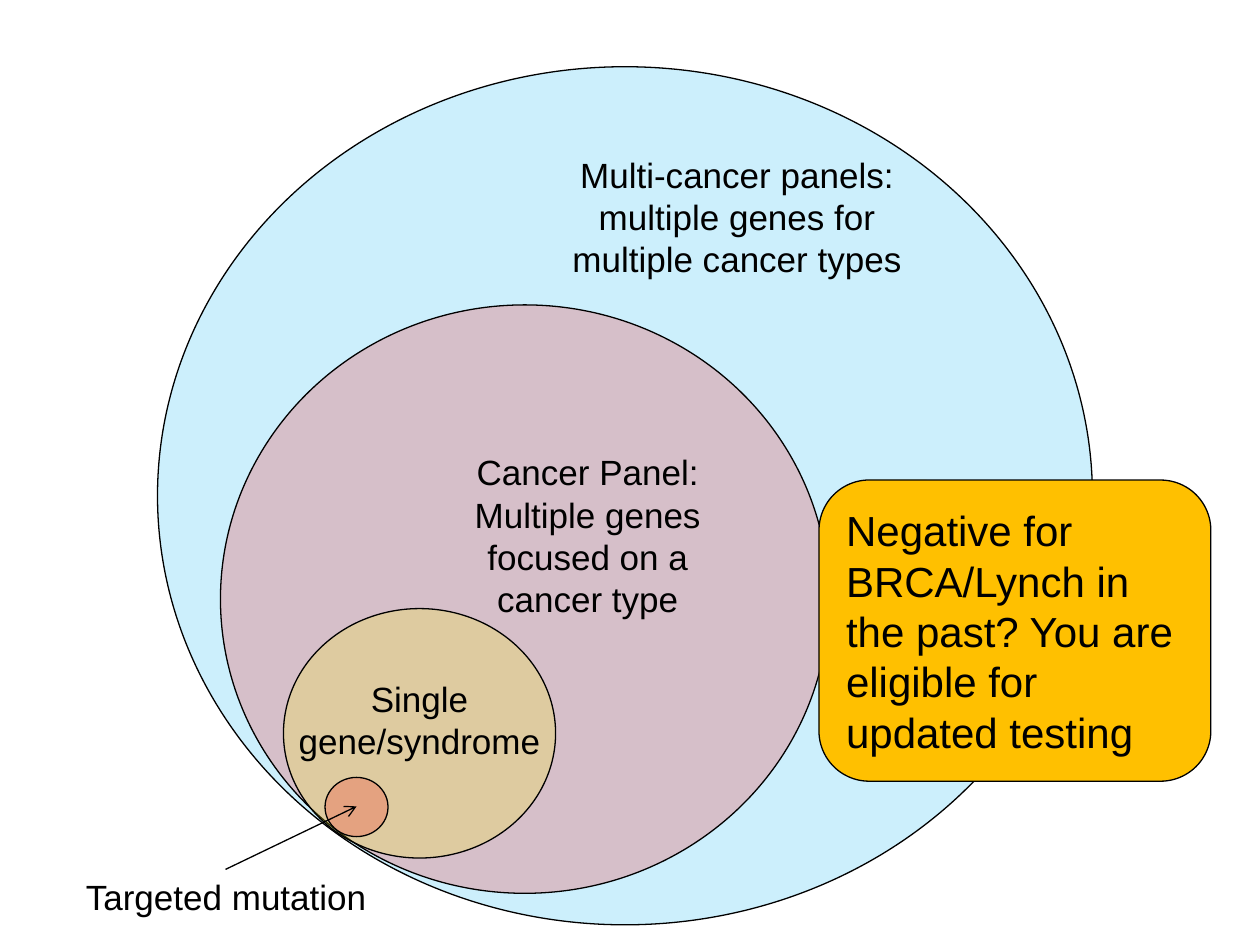
"""Build a slide of nested ellipses comparing the scope of genetic cancer tests."""
from lxml import etree
from pptx import Presentation
from pptx import util as u
from pptx.dml.color import RGBColor
from pptx.enum import shapes, text
from pptx.oxml.ns import qn

PX = u.Inches(1) // 100
THEME = {
    "font": "Arial", "ink": "000000", "line": 0.75, "label": 20, "callout": 24,
    "blue": "00B0F0", "red": "FF0000", "yellow": "FFFF00", "amber": "FFC000",
    "alpha": "20000",
}


def add_panel(slide, kind, box, color, alpha=None):
    """Add an outlined, filled shape."""
    shape = slide.shapes.add_shape(kind, *[value * PX for value in box])
    shape.shadow.inherit = False
    shape.fill.solid()
    shape.fill.fore_color.rgb = RGBColor.from_string(THEME[color])
    if alpha:
        fill_color = shape.fill._xPr.find(qn("a:solidFill"))[0]
        etree.SubElement(fill_color, qn("a:alpha"), val=alpha)
    shape.line.color.rgb = RGBColor.from_string(THEME["ink"])
    shape.line.width = u.Pt(THEME["line"])
    return shape


def write(shape, wording, size, alignment, anchor):
    """Fill a shape with one formatted paragraph."""
    frame = shape.text_frame
    frame.word_wrap = True
    frame.vertical_anchor = anchor
    paragraph = frame.paragraphs[0]
    paragraph.alignment = alignment
    run = paragraph.add_run()
    run.text = wording
    formats = {"name": THEME["font"], "size": u.Pt(THEME[size])}
    for name, value in formats.items():
        setattr(run.font, name, value)
    run.font.color.rgb = RGBColor.from_string(THEME["ink"])


presentation = Presentation()
presentation.slide_width = 1000 * PX
presentation.slide_height = 750 * PX
slide = presentation.slides.add_slide(presentation.slide_layouts[6])

ellipses = [
    ((125, 53, 742, 681), "blue"),
    ((175, 242, 483, 467), "red"),
    ((225, 483, 216, 198), "yellow"),
    ((258, 617, 50, 47), "red"),
]
for box, color in ellipses:
    add_panel(slide, shapes.MSO_SHAPE.OVAL, box, color, THEME["alpha"])

labels = [
    ((333, 353, 267, 145), "Cancer Panel: Multiple genes focused on a cancer type"),
    ((435, 117, 300, 111), "Multi-cancer panels: multiple genes for multiple cancer types"),
    ((225, 533, 216, 77), "Single gene/syndrome"),
    ((42, 690, 275, 44), "Targeted mutation"),
]
for box, wording in labels:
    label = slide.shapes.add_textbox(*[value * PX for value in box])
    write(label, wording, "label", text.PP_ALIGN.CENTER, text.MSO_ANCHOR.TOP)

arrow = slide.shapes.add_connector(
    shapes.MSO_CONNECTOR.STRAIGHT, *[value * PX for value in (179, 690, 283, 640)])
arrow.line.color.rgb = RGBColor.from_string(THEME["ink"])
arrow.line.width = u.Pt(THEME["line"])
etree.SubElement(arrow.line._get_or_add_ln(), qn("a:tailEnd"), type="arrow")
etree.SubElement(arrow._element.spPr, qn("a:effectLst"))

callout = add_panel(
    slide, shapes.MSO_SHAPE.ROUNDED_RECTANGLE, (650, 381, 311, 239), "amber")
write(callout, "Negative for BRCA/Lynch in the past? You are eligible for updated testing",
      "callout", text.PP_ALIGN.LEFT, text.MSO_ANCHOR.MIDDLE)

presentation.save("out.pptx")
